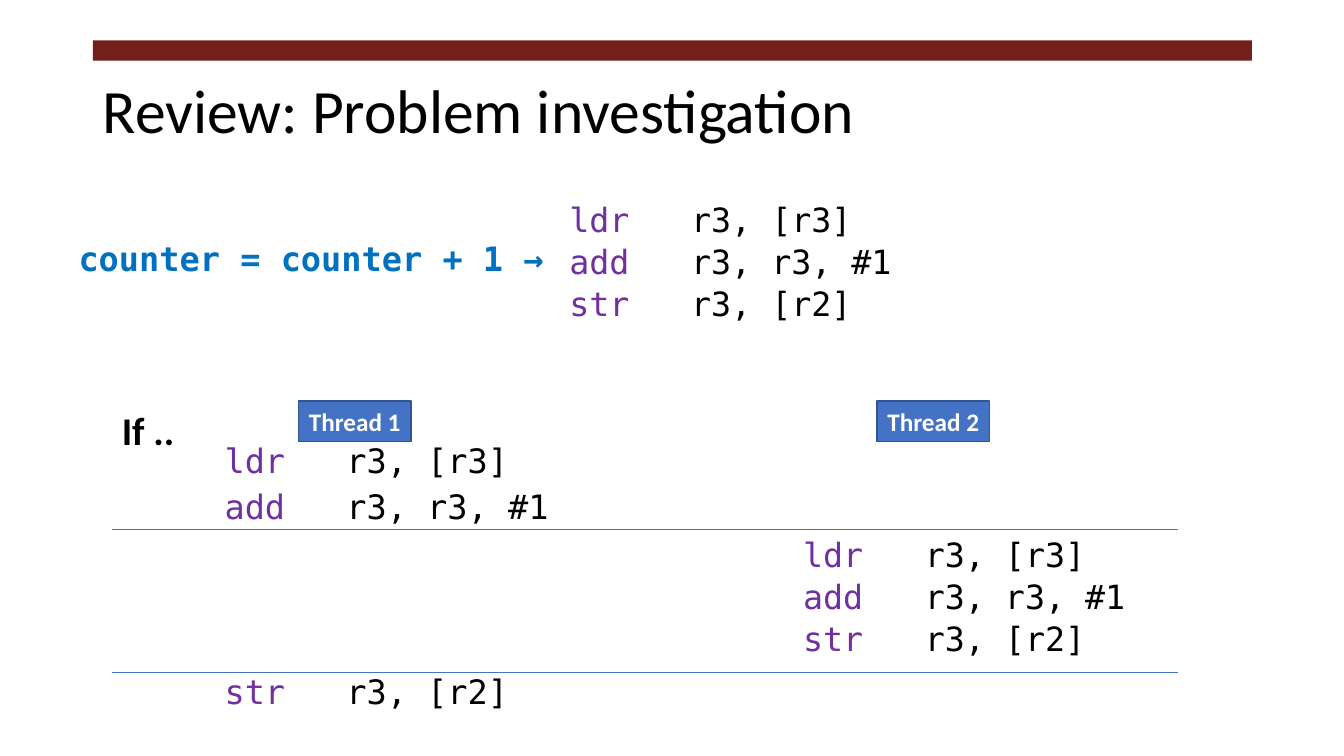
from pptx import Presentation
from pptx.dml.color import RGBColor
from pptx.enum.shapes import MSO_CONNECTOR, MSO_SHAPE
from pptx.enum.text import MSO_ANCHOR, PP_ALIGN
from pptx.oxml.ns import qn
from pptx.util import Cm, Pt
from lxml.etree import SubElement

TITLE = "Review: Problem investigation"
COUNT = "counter = counter + 1 →"
CASE = "If .."
LOAD = ("ldr", "r3, [r3]")
ADD = ("add", "r3, r3, #1")
STORE = ("str", "r3, [r2]")
STEPS = [LOAD, ADD, STORE]
THREADS = [
    dict(name="Thread 1", left=5.41, top=11.15, high=7.16,
         size="code", lead=0.8, gaps=[10, 10, 109.4]),
    dict(name="Thread 2", left=19.99, top=13.61, high=3.23,
         size="list", lead=0.7, gaps=[10, 10, 10]),
]
RULES = [13.33, 16.94]

THEME = dict(
    sans="Calibri", mono="DejaVu Sans Mono",
    ink="000000", bar="751F1C", op="7030A0", note="0070C0",
    badge="4472C4", edge="325491", white="FFFFFF",
    title=44, case=28, code=24, list=23.8, label=18,
)


def hue(key):
    return RGBColor.from_string(THEME[key])


def rect(slide, box, fill, edge=None):
    shape = slide.shapes.add_shape(MSO_SHAPE.RECTANGLE, *map(Cm, box))
    shape.shadow.inherit = False
    shape.fill.solid()
    shape.fill.fore_color.rgb = hue(fill)
    if edge:
        shape.line.color.rgb = hue(edge)
        shape.line.width = Pt(1)
    else:
        shape.line.fill.background()
    return shape


def write(shape, lines, size, font="sans", color="ink", bold=False, lead=1,
          gaps=None, wrap=True, align=PP_ALIGN.LEFT, anchor=MSO_ANCHOR.TOP):
    frame = shape.text_frame
    frame.word_wrap = wrap
    frame.vertical_anchor = anchor
    for i, line in enumerate(lines):
        para = frame.add_paragraph() if i else frame.paragraphs[0]
        para.alignment = align
        para.line_spacing = lead
        para.space_before = Pt(gaps[i] if gaps else 0)
        parts = [(line, color)]
        if isinstance(line, tuple):
            parts = [(line[0], "op"), ("\t" + line[1], color)]
            tabs = SubElement(para._p.get_or_add_pPr(), qn("a:tabLst"))
            SubElement(tabs, qn("a:tab"), pos=str(Cm(3.07)), algn="l")
        for text, tint in parts:
            run = para.add_run()
            run.text = text
            run.font.name = THEME[font]
            run.font.size = Pt(THEME[size])
            run.font.bold = bold
            run.font.color.rgb = hue(tint)


def label(slide, box, lines, size, **style):
    write(slide.shapes.add_textbox(*map(Cm, box)), lines, size, **style)


def rule(slide, y):
    line = slide.shapes.add_connector(
        MSO_CONNECTOR.STRAIGHT, Cm(2.82), Cm(y), Cm(29.69), Cm(y))
    line.line.color.rgb = hue("badge")
    line.line.width = Pt(0.5)
    SubElement(line._element.spPr, qn("a:effectLst"))


def main():
    deck = Presentation()
    deck.slide_width, deck.slide_height = Cm(33.87), Cm(19.05)
    slide = deck.slides.add_slide(deck.slide_layouts[6])

    rect(slide, (2.34, 1.02, 29.21, 0.51), "bar")
    label(slide, (2.34, 1.02, 29.21, 3.68), [TITLE], "title",
          lead=0.9, anchor=MSO_ANCHOR.MIDDLE)
    label(slide, (14.1, 5.16, 9.91, 3.23), STEPS, "list",
          font="mono", lead=0.7, gaps=[10, 10, 10])
    label(slide, (1.73, 5.87, 13.33, 1.27), [COUNT], "code",
          font="mono", color="note", bold=True)
    label(slide, (2.82, 10.11, 1.85, 1.45), [CASE], "case",
          bold=True, wrap=False)

    for y in RULES:
        rule(slide, y)
    for t in THREADS:
        badge = rect(slide, (t["left"] + 2.11, 10.11, 2.84, 1.02),
                     "badge", "edge")
        write(badge, [t["name"]], "label", color="white", bold=True,
              wrap=False, align=PP_ALIGN.CENTER, anchor=MSO_ANCHOR.MIDDLE)
        label(slide, (t["left"], t["top"], 9.91, t["high"]), STEPS,
              t["size"], font="mono", lead=t["lead"], gaps=t["gaps"])

    deck.save("out.pptx")


if __name__ == "__main__":
    main()
